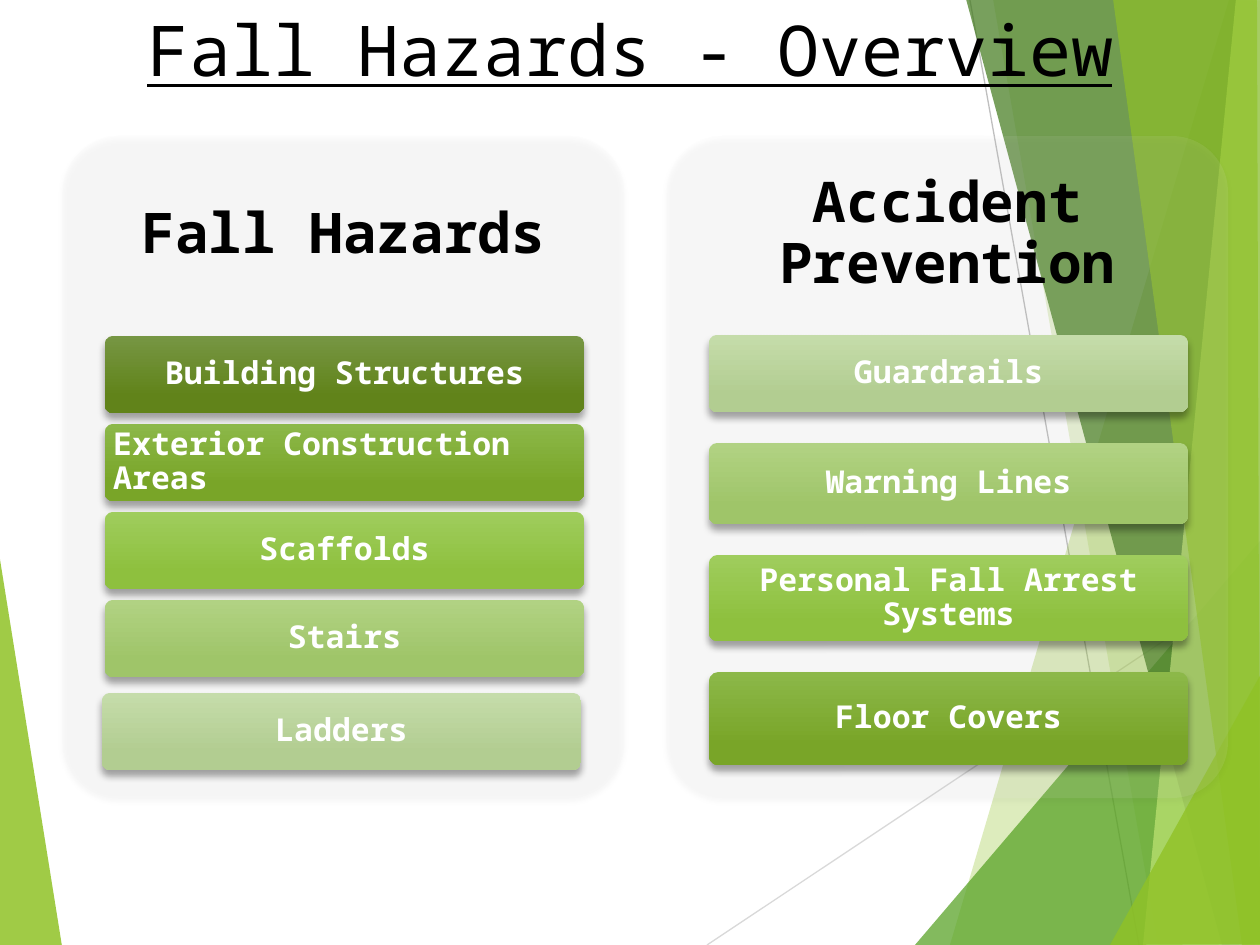
from lxml.etree import SubElement
from pptx import Presentation
from pptx.dml.color import RGBColor
from pptx.enum.shapes import MSO_CONNECTOR, MSO_SHAPE
from pptx.enum.text import MSO_ANCHOR, PP_ALIGN
from pptx.oxml.ns import qn
from pptx.util import Pt

EMU_PER_PX = 914400 / 126
FONT = "Noto Sans Mono"
BLACK, WHITE, PANEL_GREY = "000000", "FFFFFF", "F2F2F2"
OLIVE = ("769643", "61831A")
MOSS = ("8CB849", "79A528")
LIME = ("9FCD5D", "8EC03E")
LEAF = ("B1D283", "9FC569")
MIST = ("C5DCAA", "B2CD91")

LEFT_FACET = ([(-1, 553), (62, 946), (-1, 945)], "90C226", 85)
RIGHT_FACETS = [
    ([(1229, 0), (950, 945), (1262, 946), (1261, 1)], "90C226", 30),
    ([(993, -1), (1158, 945), (1261, 945), (1261, -1)], "90C226", 20),
    ([(915, 945), (1260, 541), (1261, 945)], "54A021", 72),
    ([(966, -1), (1222, 945), (1261, 944), (1261, -1)], "3F7819", 70),
    ([(1236, -1), (1143, 945), (1261, 945), (1260, -1)], "C0E474", 70),
    ([(1113, -1), (1242, 945), (1260, 945), (1257, -1)], "90C226", 65),
    ([(1110, 945), (1261, 674), (1261, 944)], "90C226", 80),
]
RULES = [((707, 945), (1261, 576), "D9D9D9"), ((970, 0), (1139, 945), "BFBFBF")]

PANEL_TOP, PANEL_WIDTH, PANEL_HEIGHT, HEADING_HEIGHT = 136, 561, 662, 198
CARD_INDENT, CARD_WIDTH, CARD_HEIGHT = 42, 479, 77
HAZARDS = [
    ("Building Structures", OLIVE, PP_ALIGN.CENTER),
    ("Exterior Construction Areas", MOSS, PP_ALIGN.LEFT),
    ("Scaffolds", LIME, PP_ALIGN.CENTER),
    ("Stairs", LEAF, PP_ALIGN.CENTER),
]
PREVENTION = [
    ("Guardrails", MIST, 77),
    ("Warning Lines", LEAF, 81),
    ("Personal Fall Arrest Systems", LIME, 86),
    ("Floor Covers", MOSS, 93),
]


def px(value):
    return round(value * EMU_PER_PX)


def color(code):
    return RGBColor.from_string(code)


def fill_solid(shape, code, opacity):
    shape.fill.solid()
    shape.fill.fore_color.rgb = color(code)
    tint = shape.fill._xPr.find(qn("a:solidFill"))[0]
    SubElement(tint, qn("a:alpha"), val=str(opacity * 1000))
    shape.line.fill.background()


def fill_gradient(shape, shades):
    shape.fill.gradient()
    shape.fill.gradient_angle = 270
    for stop, code, position in zip(shape.fill.gradient_stops, shades, (0, 0.78)):
        stop.color.rgb = color(code)
        stop.position = position
    shape.line.fill.background()


def add_shadow(shape, blur, distance):
    shape.shadow.inherit = False
    effects = shape._element.spPr.find(qn("a:effectLst"))
    shadow = SubElement(effects, qn("a:outerShdw"), blurRad=str(Pt(blur)),
                        dist=str(Pt(distance)), dir="5400000", rotWithShape="0")
    tint = SubElement(shadow, qn("a:srgbClr"), val=BLACK)
    SubElement(tint, qn("a:alpha"), val="35000")


def write_text(shape, text, size, code, insets, align=PP_ALIGN.CENTER,
               anchor=MSO_ANCHOR.MIDDLE, spacing=0.9, bold=True, underline=False):
    frame = shape.text_frame
    frame.word_wrap = True
    frame.vertical_anchor = anchor
    frame.margin_left = frame.margin_right = px(insets[0])
    frame.margin_top = frame.margin_bottom = px(insets[1])
    para = frame.paragraphs[0]
    para.alignment = align
    para.line_spacing = spacing
    span = para.add_run()
    span.text = text
    font = span.font
    font.name, font.size, font.bold, font.underline = FONT, Pt(size), bold, underline
    font.color.rgb = color(code)


def add_facet(page, points, code, opacity):
    builder = page.shapes.build_freeform(*points[0], scale=EMU_PER_PX)
    builder.add_line_segments(points[1:], close=True)
    facet = builder.convert_to_shape()
    facet.shadow.inherit = False
    fill_solid(facet, code, opacity)


def add_rule(page, start, end, code):
    rule = page.shapes.add_connector(
        MSO_CONNECTOR.STRAIGHT, *map(px, start), *map(px, end))
    rule.line.color.rgb = color(code)
    rule.line.width = Pt(0.75)
    SubElement(rule._element.spPr, qn("a:effectLst"))


def add_rounded(page, *bounds):
    shape = page.shapes.add_shape(MSO_SHAPE.ROUNDED_RECTANGLE, *map(px, bounds))
    shape.adjustments[0] = 0.1
    return shape


def add_title(page, text):
    box = page.shapes.add_textbox(*map(px, (63, 1, 1134, 145)))
    write_text(box, text, 40, BLACK, (13, 6), anchor=MSO_ANCHOR.TOP,
               spacing=1.0, bold=False, underline=True)


def add_panel(page, left, heading, opacity):
    panel = add_rounded(page, left, PANEL_TOP, PANEL_WIDTH, PANEL_HEIGHT)
    fill_solid(panel, PANEL_GREY, opacity)
    add_shadow(panel, 3, 2)
    box = page.shapes.add_textbox(
        *map(px, (left, PANEL_TOP, PANEL_WIDTH, HEADING_HEIGHT)))
    write_text(box, heading, 32, BLACK, (16, 16))


def add_card(page, left, top, height, text, shades, align=PP_ALIGN.CENTER):
    card = add_rounded(page, left, top, CARD_WIDTH, height)
    fill_gradient(card, shades)
    add_shadow(card, 4, 3)
    write_text(card, text, 18, WHITE, (6, 5), align)


def add_hazards(page, left):
    add_panel(page, left, "Fall Hazards", 10)
    for row, (text, shades, align) in enumerate(HAZARDS):
        add_card(page, left + CARD_INDENT, 336 + row * 88, CARD_HEIGHT,
                 text, shades, align)
    add_card(page, left + CARD_INDENT - 3, 693, CARD_HEIGHT, "Ladders", MIST)


def add_prevention(page, left):
    add_panel(page, left, "Accident Prevention", 9)
    top = 335
    for text, shades, height in PREVENTION:
        add_card(page, left + CARD_INDENT, top, height, text, shades)
        top += height + 31


def main():
    deck = Presentation()
    deck.slide_width, deck.slide_height = px(1260), px(945)
    page = deck.slides.add_slide(deck.slide_layouts[6])
    add_facet(page, *LEFT_FACET)
    for rule in RULES:
        add_rule(page, *rule)
    for facet in RIGHT_FACETS:
        add_facet(page, *facet)
    add_title(page, "Fall Hazards - Overview")
    add_hazards(page, 63)
    add_prevention(page, 667)
    deck.save("out.pptx")


if __name__ == "__main__":
    main()
